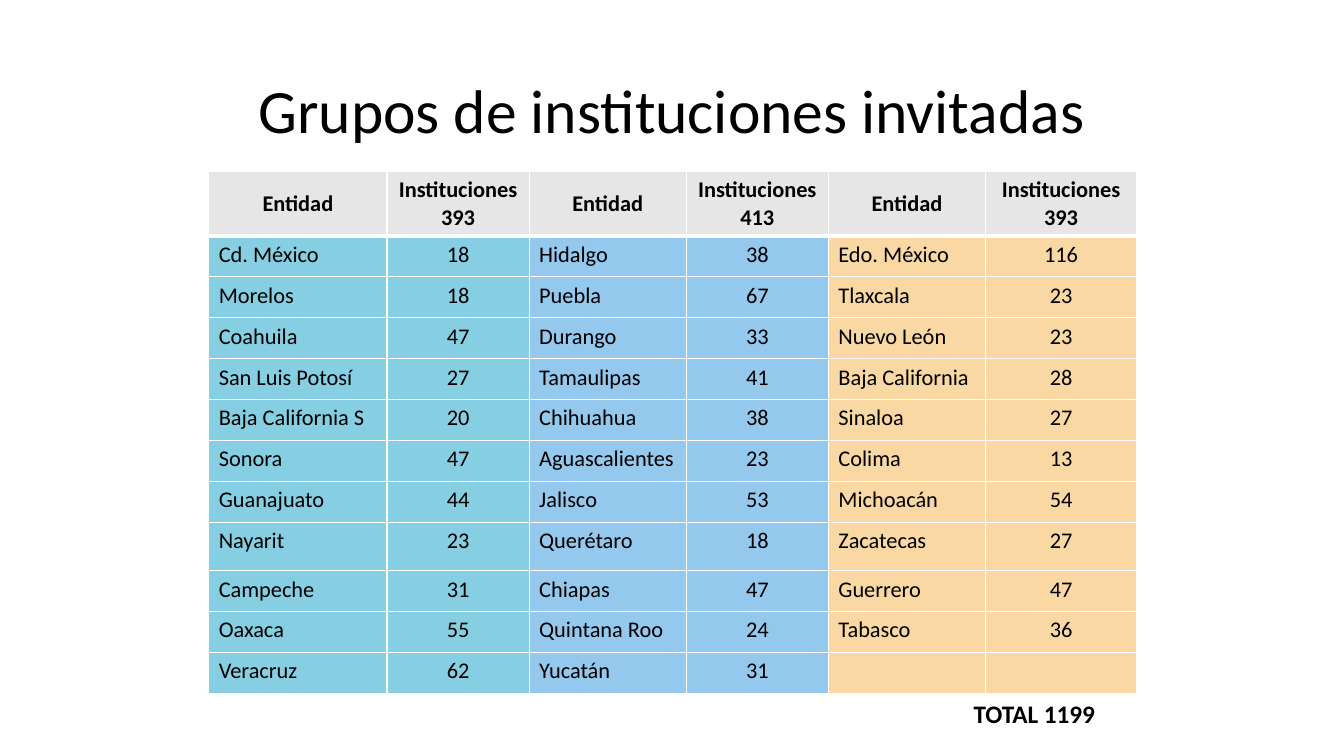
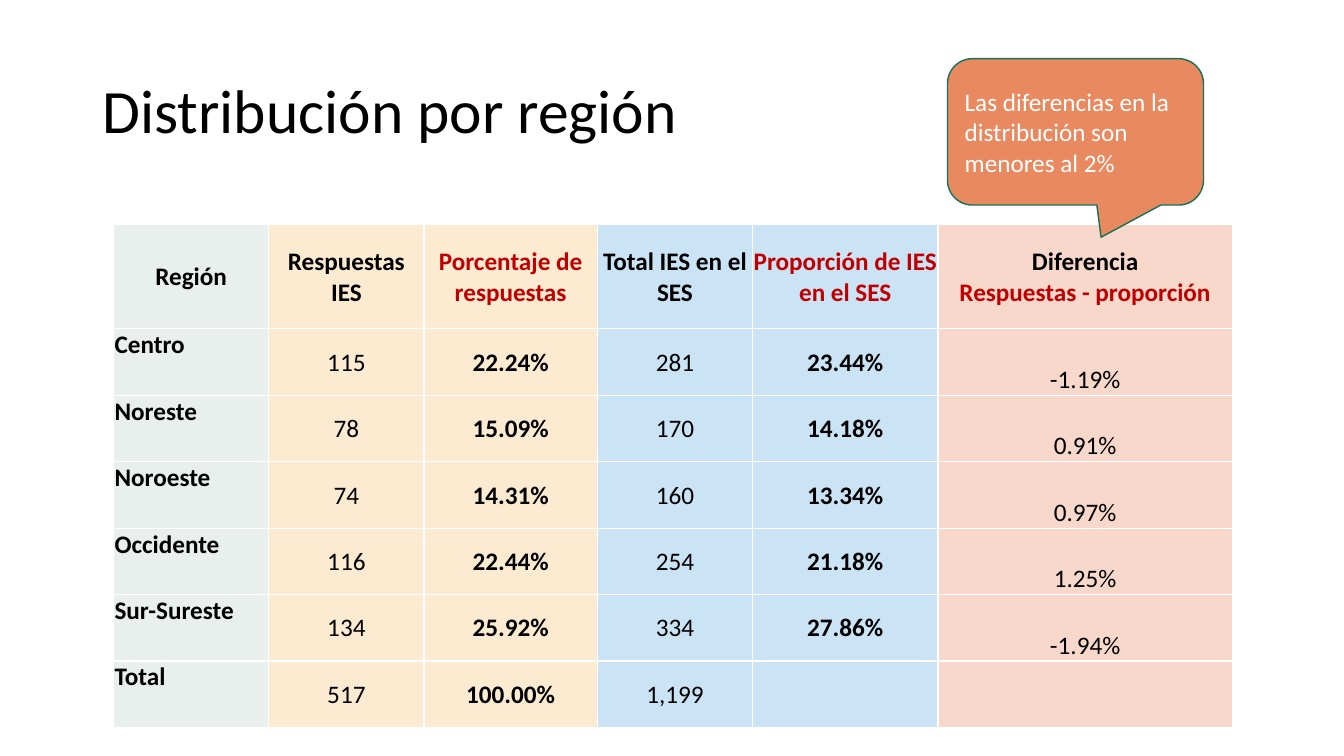
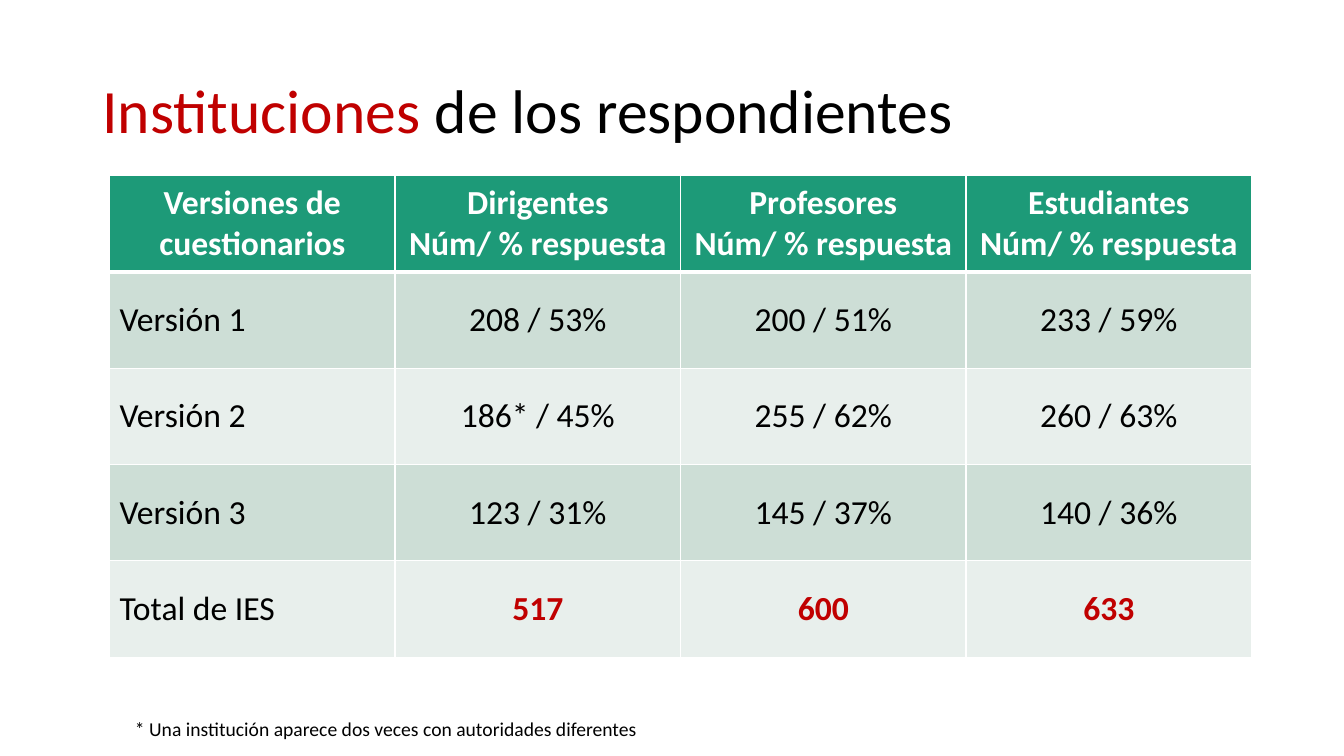
from itertools import product
from lxml.etree import SubElement
from pptx import Presentation
from pptx.dml.color import RGBColor
from pptx.enum.shapes import MSO_SHAPE
from pptx.enum.text import MSO_ANCHOR as ANCHOR, PP_ALIGN as ALIGN
from pptx.oxml.ns import qn
from pptx.util import Inches, Pt

FONT = "Calibri"
BLACK, WHITE, RED = "000000", "FFFFFF", "C00000"
GRAY, GREEN, SAGE, MIST = "E7E6E6", "1D9A78", "CDDED6", "E8EFEC"
TEAL, BLUE, AMBER = "86CFE2", "94C8ED", "F9D8A3"
CREAM, SKY, PEACH = "FCEBD1", "CAE4F6", "F8D8CA"
ORANGE, DARK_GREEN = "E98960", "157259"
THIN, THICK = 1, 3

# Boxes are (left, top, width, height) in percent of the slide.
TITLE_BOX = (6.88, 5.33, 86.25, 19.33)

prs = Presentation()
prs.slide_width, prs.slide_height = Inches(13.333), Inches(7.5)


def rgb(hex_color):
    return RGBColor.from_string(hex_color)


def place(box):
    """Turn a percent box into slide lengths."""
    sizes = (prs.slide_width, prs.slide_height) * 2
    return [int(share * size / 100) for share, size in zip(box, sizes)]


def write(tf, content, size=18, color=BLACK, bold=False, align=ALIGN.LEFT, spacing=None):
    """Write a string, or a list of (text, colour) runs; a newline starts a paragraph."""
    runs = [(content, color)] if isinstance(content, str) else content
    p = tf.paragraphs[0]
    for text, run_color in runs:
        for i, part in enumerate(text.split("\n")):
            if i:
                p = tf.add_paragraph()
            p.alignment = align
            if spacing:
                p.line_spacing = spacing
            if part:
                r = p.add_run()
                r.text = part
                r.font.name, r.font.size, r.font.bold = FONT, Pt(size), bold
                r.font.color.rgb = rgb(run_color)


def add_text(slide, box, content, anchor=ANCHOR.TOP, **fmt):
    tf = slide.shapes.add_textbox(*place(box)).text_frame
    tf.word_wrap, tf.vertical_anchor = True, anchor
    write(tf, content, **fmt)


def add_slide(title, align=ALIGN.LEFT):
    slide = prs.slides.add_slide(prs.slide_layouts[6])
    add_text(slide, TITLE_BOX, title, ANCHOR.MIDDLE, size=44, align=align, spacing=0.9)
    return slide


def set_borders(cell, top, bottom):
    tc_pr = cell._tc.get_or_add_tcPr()
    for side, width in (("L", THIN), ("R", THIN), ("T", top), ("B", bottom)):
        ln = SubElement(tc_pr, qn(f"a:ln{side}"), w=str(Pt(width)))
        SubElement(SubElement(ln, qn("a:solidFill")), qn("a:srgbClr"), val=WHITE)


def add_grid(slide, box, rows, col_shares, row_shares, style, header_rule=THIN, margins=None):
    """Add a table; style(row, column) gives fill, anchor and text format of a cell."""
    left, top, width, height = place(box)
    table = slide.shapes.add_table(len(rows), len(col_shares), left, top, width, height).table
    table.first_row = table.horz_banding = False
    for col, share in zip(table.columns, col_shares):
        col.width = int(width * share / sum(col_shares))
    for row, share in zip(table.rows, row_shares):
        row.height = int(height * share / sum(row_shares))
    for r, c in product(range(len(rows)), range(len(col_shares))):
        cell = table.cell(r, c)
        fmt = style(r, c)
        set_borders(cell, header_rule if r == 1 else THIN, header_rule if r == 0 else THIN)
        cell.fill.solid()
        cell.fill.fore_color.rgb = rgb(fmt.pop("fill"))
        cell.vertical_anchor = fmt.pop("anchor")
        if margins:
            (cell.margin_left, cell.margin_top,
             cell.margin_right, cell.margin_bottom) = map(Inches, margins)
        write(cell.text_frame, rows[r][c], **fmt)


def add_callout(slide, box, text):
    sp = slide.shapes.add_shape(MSO_SHAPE.ROUNDED_RECTANGULAR_CALLOUT, *place(box))
    for i, value in enumerate((0.1, 0.72, 0.17)):
        sp.adjustments[i] = value
    sp.shadow.inherit = False
    sp.fill.solid()
    sp.fill.fore_color.rgb = rgb(ORANGE)
    sp.line.color.rgb, sp.line.width = rgb(DARK_GREEN), Pt(1)
    sp.text_frame.word_wrap = True
    sp.text_frame.vertical_anchor = ANCHOR.MIDDLE
    write(sp.text_frame, text, color=WHITE)


def split_rows(text):
    return [line.split("|") for line in text.strip().splitlines()]


def invited_style(r, c):
    head = r == 0
    return dict(fill=GRAY if head else (TEAL, BLUE, AMBER)[c // 2],
                anchor=ANCHOR.MIDDLE if head else ANCHOR.TOP,
                size=16, bold=head,
                align=ALIGN.CENTER if head or c % 2 else ALIGN.LEFT)


def region_style(r, c):
    head, name, difference = r == 0, c == 0, c == 5
    anchor = ANCHOR.MIDDLE
    if not head and name:
        anchor = ANCHOR.TOP
    elif not head and difference:
        anchor = ANCHOR.BOTTOM
    return dict(fill=(MIST, CREAM, CREAM, SKY, SKY, PEACH)[c], anchor=anchor,
                color=RED if head and c in (2, 4) else BLACK,
                bold=head or c in (0, 2, 4),
                align=ALIGN.LEFT if name and not head else ALIGN.CENTER)


def version_style(r, c):
    head, total = r == 0, r == 4 and c > 0
    return dict(fill=GREEN if head else SAGE if r % 2 else MIST, anchor=ANCHOR.MIDDLE,
                size=24, color=WHITE if head else RED if total else BLACK,
                bold=head or total,
                align=ALIGN.CENTER if head or c else ALIGN.LEFT)


def invited_slide():
    slide = add_slide("Grupos de instituciones invitadas", ALIGN.CENTER)
    header = [text for total in (393, 413, 393)
              for text in ("Entidad", f"Instituciones\n{total}")]
    body = split_rows("""
Cd. México|18|Hidalgo|38|Edo. México|116
Morelos|18|Puebla|67|Tlaxcala|23
Coahuila|47|Durango|33|Nuevo León|23
San Luis Potosí|27|Tamaulipas|41|Baja California|28
Baja California S|20|Chihuahua|38|Sinaloa|27
Sonora|47|Aguascalientes|23|Colima|13
Guanajuato|44|Jalisco|53|Michoacán|54
Nayarit|23|Querétaro|18|Zacatecas|27
Campeche|31|Chiapas|47|Guerrero|47
Oaxaca|55|Quintana Roo|24|Tabasco|36
Veracruz|62|Yucatán|31||
""")
    add_grid(slide, (15.53, 22.67, 69.05, 69.07), [header] + body,
             (1.77, 1.41, 1.56, 1.41, 1.56, 1.5),
             [64] + [40.6] * 7 + [48] + [40.6] * 3, invited_style, THICK)
    add_text(slide, (69.38, 91.6, 15.15, 5.6), "TOTAL 1199", ANCHOR.MIDDLE,
             bold=True, align=ALIGN.CENTER)


def region_slide():
    slide = add_slide("Distribución por región")
    header = ["Región", "Respuestas IES", "Porcentaje de respuestas",
              "Total IES en el SES", "Proporción de IES en el SES",
              [("Diferencia\n", BLACK), ("Respuestas - proporción", RED)]]
    body = split_rows("""
Centro|115|22.24%|281|23.44%|-1.19%
Noreste|78|15.09%|170|14.18%|0.91%
Noroeste|74|14.31%|160|13.34%|0.97%
Occidente|116|22.44%|254|21.18%|1.25%
Sur-Sureste|134|25.92%|334|27.86%|-1.94%
Total|517|100.00%|1,199||
""")
    add_grid(slide, (8.45, 29.65, 83.25, 66.6), [header] + body,
             (1.54, 1.54, 1.72, 1.54, 1.84, 2.92), [1.04] + [0.66] * 6,
             region_style, margins=(0.01, 0.01, 0.01, 0))
    add_callout(slide, (70.5, 7.77, 19.05, 19.36),
                "Las diferencias en la distribución son menores al 2%")


def version_slide():
    slide = add_slide([("Instituciones", RED), (" de los respondientes", BLACK)])
    header = ["Versiones de cuestionarios"] + [
        f"{group}\nNúm/ % respuesta" for group in ("Dirigentes", "Profesores", "Estudiantes")]
    body = split_rows("""
Versión 1|208 / 53%|200 / 51%|233 / 59%
Versión 2|186* / 45%|255 / 62%|260 / 63%
Versión 3|123 / 31%|145 / 37%|140 / 36%
Total de IES|517|600|633
""")
    add_grid(slide, (8.15, 23.2, 84.98, 63.73), [header] + body,
             [1] * 4, [1] * 5, version_style, THICK)
    add_text(slide, (9.3, 94.13, 39.3, 4.53),
             "* Una institución aparece dos veces con autoridades diferentes", size=14)


def main():
    invited_slide()
    region_slide()
    version_slide()
    prs.save("out.pptx")


if __name__ == "__main__":
    main()
